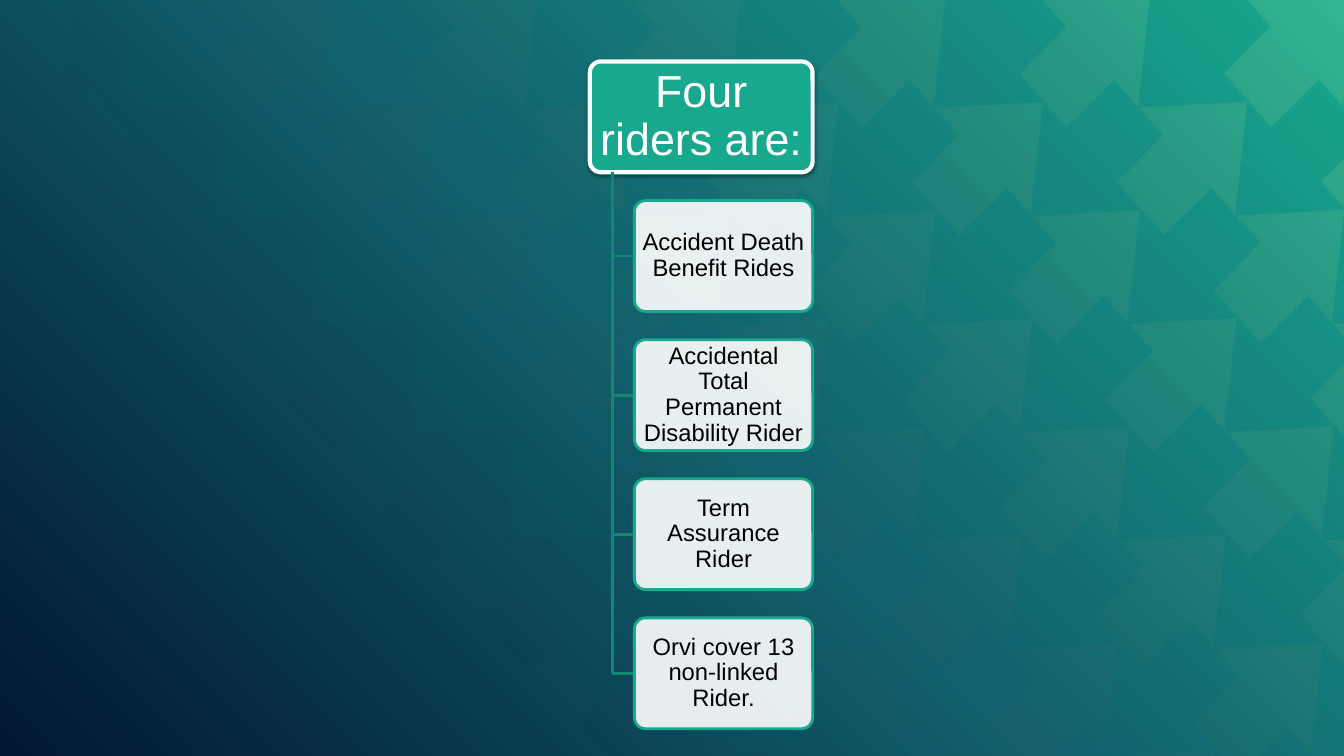
from lxml.etree import SubElement
from pptx import Presentation
from pptx.dml.color import RGBColor
from pptx.enum.shapes import MSO_SHAPE
from pptx.enum.text import MSO_ANCHOR, PP_ALIGN
from pptx.oxml import parse_xml
from pptx.oxml.ns import nsdecls, qn
from pptx.util import Inches, Pt

WIDE, HIGH = 13.33, 7.5
GREEN, TEAL, NAVY, WHITE = "18A88D", "11606D", "011733", "FFFFFF"
RIDERS = [
    "Accident Death Benefit Rides",
    "Accidental Total Permanent Disability Rider",
    "Term Assurance Rider",
    "Orvi cover 13 non-linked Rider.",
]
# Arrow outline, measured from its tip
ARROW = [(0, 0), (-1.08, 0.06), (-0.84, 0.33), (-1.3, 0.8),
         (-0.83, 1.33), (-0.36, 0.86), (-0.12, 1.13)]


def color(text):
    return RGBColor.from_string(text)


def fade(stops, shade):
    """Gradient fill from (place, colour, opacity) stops, in percent."""
    marks = "".join(
        f'<a:gs pos="{at * 1000}"><a:srgbClr val="{tone}">'
        f'<a:alpha val="{alpha * 1000}"/></a:srgbClr></a:gs>'
        for at, tone, alpha in stops)
    return parse_xml(f'<a:gradFill {nsdecls("a")} rotWithShape="1">'
                     f'<a:gsLst>{marks}</a:gsLst>{shade}</a:gradFill>')


def refill(props, fill):
    old = props.find(qn("a:solidFill"))
    props.replace(old, fill)


def clip(points, axis, edge, sign):
    """Keep the part of a polygon on one side of an edge."""
    kept = []
    for a, b in zip(points, points[1:] + points[:1]):
        da, db = sign * (a[axis] - edge), sign * (b[axis] - edge)
        if da >= 0:
            kept.append(a)
        if da * db < 0:
            t = da / (da - db)
            kept.append((a[0] + t * (b[0] - a[0]), a[1] + t * (b[1] - a[1])))
    return kept


def trace(slide, paths, close):
    """Freeform through one or more lists of points in inches."""
    first, *rest = [[(Inches(x), Inches(y)) for x, y in p] for p in paths]
    pen = slide.shapes.build_freeform(*first[0])
    pen.add_line_segments(first[1:], close=close)
    for path in rest:
        pen.move_to(*path[0])
        pen.add_line_segments(path[1:], close=close)
    shape = pen.convert_to_shape()
    shape.shadow.inherit = False
    return shape


def backdrop(slide, left, top, right, bottom):
    # Glow from the top right corner
    slide.background.fill.solid()
    glow = '<a:path path="circle"><a:fillToRect l="100000" b="100000"/></a:path>'
    refill(slide.element.find(".//" + qn("p:bgPr")),
           fade([(0, GREEN, 100), (50, TEAL, 100), (100, NAVY, 100)], glow))

    # Slanted grid of arrows, cut at the box edges
    paths = []
    for row in range(-1, 7):
        for col in range(7):
            x = left + 1.53 + 8.1 * col / 4 + 0.96 * row
            y = top + 1.04 + 1.07 * row - 0.02 * col / 4
            path = [(x + dx, y + dy) for dx, dy in ARROW]
            for side in ((0, left, 1), (0, right, -1), (1, top, 1), (1, bottom, -1)):
                path = clip(path, *side)
            if len(path) > 2:
                paths.append(path)
    tiles = trace(slide, paths, True)
    tiles.fill.solid()
    tiles.line.fill.background()
    refill(tiles.element.spPr,
           fade([(0, "BCF6A7", 17), (80, NAVY, 0), (100, NAVY, 0)],
                '<a:lin ang="8100000" scaled="0"/>'))


def card(slide, box, text, size, ink, fill, edge, width, pad):
    shape = slide.shapes.add_shape(MSO_SHAPE.ROUNDED_RECTANGLE, *map(Inches, box))
    shape.adjustments[0] = 0.1
    shape.shadow.inherit = False
    shape.fill.solid()
    shape.fill.fore_color.rgb = color(fill)
    shape.line.color.rgb = color(edge)
    shape.line.width = Pt(width)
    frame = shape.text_frame
    frame.word_wrap = True
    frame.vertical_anchor = MSO_ANCHOR.MIDDLE
    frame.margin_left = frame.margin_right = Inches(pad)
    frame.margin_top = frame.margin_bottom = Inches(pad / 2)
    frame.text = text
    para = frame.paragraphs[0]
    para.alignment = PP_ALIGN.CENTER
    para.line_spacing = 0.9
    font = para.runs[0].font
    font.name, font.size = "Arial", Pt(size)
    font.color.rgb = color(ink)
    return shape


def tree(slide, left, top, width, high, step):
    # Heading card with a soft shadow
    head = card(slide, (left, top, width, high), "Four riders are:",
                32, WHITE, GREEN, WHITE, 3, 0.07)
    effects = head.element.spPr.find(qn("a:effectLst"))
    effects.append(parse_xml(
        f'<a:outerShdw {nsdecls("a")} blurRad="{Pt(3.1)}" dist="{Pt(1.6)}" '
        'dir="5400000" rotWithShape="0"><a:srgbClr val="000000">'
        '<a:alpha val="38000"/></a:srgbClr></a:outerShdw>'))

    # Riders hang below it on elbow lines
    stem, inner = left + width * 0.1, left + width * 0.2
    for i, text in enumerate(RIDERS, 1):
        y = top + step * i
        mid = y + high / 2
        elbow = trace(slide, [[(stem, top + high), (stem, mid), (inner, mid)]], False)
        elbow.fill.background()
        elbow.line.color.rgb = color("138771")
        elbow.line.width = Pt(2)
        leaf = card(slide, (inner, y, width * 0.8, high), text,
                    17, "000000", WHITE, GREEN, 2, 0.04)
        tone = leaf.element.spPr.find(qn("a:solidFill"))[0]
        SubElement(tone, qn("a:alpha"), val="90000")


def main():
    deck = Presentation()
    deck.slide_width, deck.slide_height = Inches(WIDE), Inches(HIGH)
    slide = deck.slides.add_slide(deck.slide_layouts[6])
    backdrop(slide, 0.71, 0, WIDE, HIGH)
    tree(slide, 5.85, 0.61, 2.21, 1.1, 1.38)
    deck.save("out.pptx")


if __name__ == "__main__":
    main()
